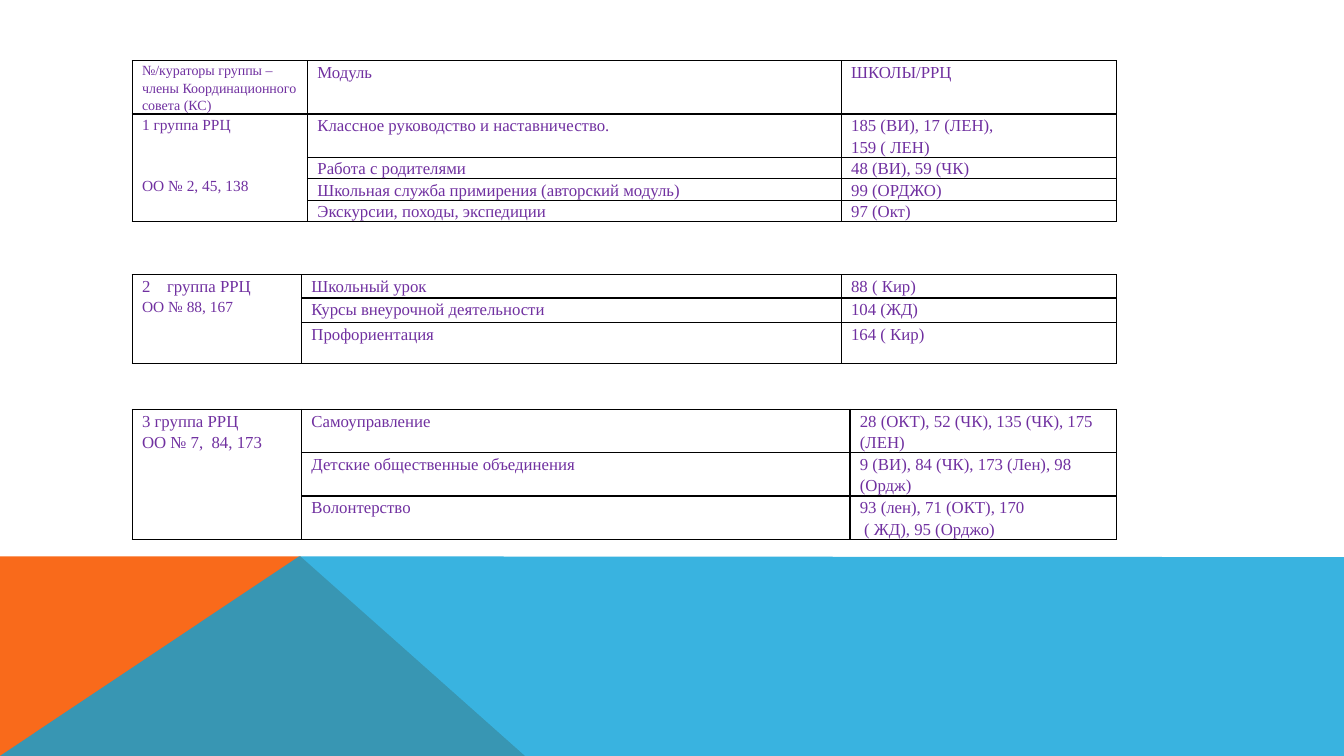
"""Build a slide with three tables of school groups, modules and schools."""
from lxml import etree
from pptx import Presentation
from pptx import util as u
from pptx.dml.color import RGBColor
from pptx.oxml import ns

PURPLE = RGBColor(0x70, 0x30, 0xA0)
ORANGE = RGBColor(0xF9, 0x6A, 0x1B)
BLUE = RGBColor(0x08, 0xA1, 0xD9)
BLACK = RGBColor(0, 0, 0)
FONT = "Times New Roman"
TABLE_LEFT = 3.33
BORDER_WIDTH = 1
BODY_SIZE = 12
NUMBER_INDENT = 0.63

SLIDE_WIDTH, SLIDE_HEIGHT, BAND_TOP = 33.87, 19.05, 14.02
BANDS = [
    (ORANGE, None, [(0, SLIDE_HEIGHT), (0, BAND_TOP), (7.57, BAND_TOP), (13.23, SLIDE_HEIGHT)]),
    (BLUE, 80, [(0, SLIDE_HEIGHT), (7.54, BAND_TOP), (SLIDE_WIDTH, BAND_TOP + 0.02),
                (SLIDE_WIDTH, SLIDE_HEIGHT)]),
]

TABLES = [
    {
        "top": 1.53, "columns": (4.42, 13.45, 6.93), "heights": (1.32, 1.09, 0.54, 0.54, 0.54),
        "group_row": 1,
        "rows": [
            ([{"text": "№/кураторы группы – члены Координационного совета (КС)", "size": 10}],
             ["Модуль"], ["ШКОЛЫ/РРЦ"]),
            ([{"text": "1 группа РРЦ", "size": 11},
              {"text": "ОО № 2, 45, 138", "size": 11, "before": 30}],
             ["Классное руководство и наставничество."], ["185 (ВИ), 17 (ЛЕН),", "159 ( ЛЕН)"]),
            ([], ["Работа с родителями"], ["48 (ВИ), 59 (ЧК)"]),
            ([], ["Школьная служба примирения (авторский модуль)"], ["99 (ОРДЖО)"]),
            ([], ["Экскурсии, походы, экспедиции"], ["97 (Окт)"]),
        ],
    },
    {
        "top": 6.92, "columns": (4.27, 13.6, 6.93), "heights": (0.59, 0.62, 1.03),
        "group_row": 0,
        "rows": [
            ([{"text": "группа РРЦ", "number": 2}, {"text": "ОО № 88, 167", "size": 11}],
             ["Школьный урок"], ["88 ( Кир)"]),
            ([], ["Курсы внеурочной деятельности"], ["104 (ЖД)"]),
            ([], ["Профориентация"], ["164 ( Кир)"]),
        ],
    },
    {
        "top": 10.32, "columns": (4.27, 13.82, 6.71), "heights": (1.09, 1.09, 1.09),
        "group_row": 0,
        "rows": [
            (["3 группа РРЦ", "ОО № 7,  84, 173"],
             ["Самоуправление"], ["28 (ОКТ), 52 (ЧК), 135 (ЧК), 175 (ЛЕН)"]),
            ([], ["Детские общественные объединения"], ["9 (ВИ), 84 (ЧК), 173 (Лен), 98 (Ордж)"]),
            ([], ["Волонтерство"], ["93 (лен), 71 (ОКТ), 170", " ( ЖД), 95 (Орджо)"]),
        ],
    },
]


def add_band(slide, color, opacity, points):
    corners = [(u.Cm(x), u.Cm(y)) for x, y in points]
    builder = slide.shapes.build_freeform(*corners[0])
    builder.add_line_segments(corners[1:], close=True)
    shape = builder.convert_to_shape()
    shape.shadow.inherit = False
    shape.fill.solid()
    shape.fill.fore_color.rgb = color
    shape.line.fill.background()
    if opacity:
        color_element = shape.element.spPr.find(".//" + ns.qn("a:srgbClr"))
        etree.SubElement(color_element, ns.qn("a:alpha"), val=str(opacity * 1000))


def add_borders(cell):
    properties = cell._tc.get_or_add_tcPr()
    for position, side in enumerate("LRTB"):
        line = etree.Element(ns.qn("a:ln" + side), w=str(u.Pt(BORDER_WIDTH)))
        fill = etree.SubElement(line, ns.qn("a:solidFill"))
        etree.SubElement(fill, ns.qn("a:srgbClr"), val=str(BLACK))
        properties.insert(position, line)


def add_number(paragraph, start):
    properties = paragraph._p.get_or_add_pPr()
    indent = u.Cm(NUMBER_INDENT)
    properties.set("marL", str(indent))
    properties.set("indent", str(-indent))
    etree.SubElement(properties, ns.qn("a:buAutoNum"), type="arabicPlain", startAt=str(start))


def write_paragraph(paragraph, line):
    line = {"text": line} if isinstance(line, str) else line
    paragraph.line_spacing = 1.15
    if "before" in line:
        paragraph.space_before = u.Pt(line["before"])
    if "number" in line:
        add_number(paragraph, line["number"])
    run = paragraph.add_run()
    run.text = line["text"]
    run.font.color.rgb = PURPLE
    for name, value in {"name": FONT, "size": u.Pt(line.get("size", BODY_SIZE))}.items():
        setattr(run.font, name, value)


def fill_cell(cell, lines):
    margins = {"margin_left": 0.25, "margin_right": 0.25, "margin_top": 0, "margin_bottom": 0}
    for name, value in margins.items():
        setattr(cell, name, u.Cm(value))
    cell.fill.background()
    add_borders(cell)
    frame = cell.text_frame
    for index, line in enumerate(lines):
        write_paragraph(frame.add_paragraph() if index else frame.paragraphs[0], line)
    if not lines:
        frame.paragraphs[0].font.size = u.Pt(1)


def add_group_table(slide, group):
    columns, heights, rows = group["columns"], group["heights"], group["rows"]
    table = slide.shapes.add_table(
        len(rows), len(columns), u.Cm(TABLE_LEFT), u.Cm(group["top"]),
        u.Cm(sum(columns)), u.Cm(sum(heights))).table
    for name, value in {"first_row": False, "horz_banding": False}.items():
        setattr(table, name, value)
    for column, width in zip(table.columns, columns):
        column.width = u.Cm(width)
    for row, height, contents in zip(table.rows, heights, rows):
        row.height = u.Cm(height)
        for cell, lines in zip(row.cells, contents):
            fill_cell(cell, lines)
    table.cell(group["group_row"], 0).merge(table.cell(len(rows) - 1, 0))


def main():
    presentation = Presentation()
    presentation.slide_width = u.Cm(SLIDE_WIDTH)
    presentation.slide_height = u.Cm(SLIDE_HEIGHT)
    slide = presentation.slides.add_slide(presentation.slide_layouts[6])
    for band in BANDS:
        add_band(slide, *band)
    for group in TABLES:
        add_group_table(slide, group)
    presentation.save("out.pptx")


if __name__ == "__main__":
    main()
